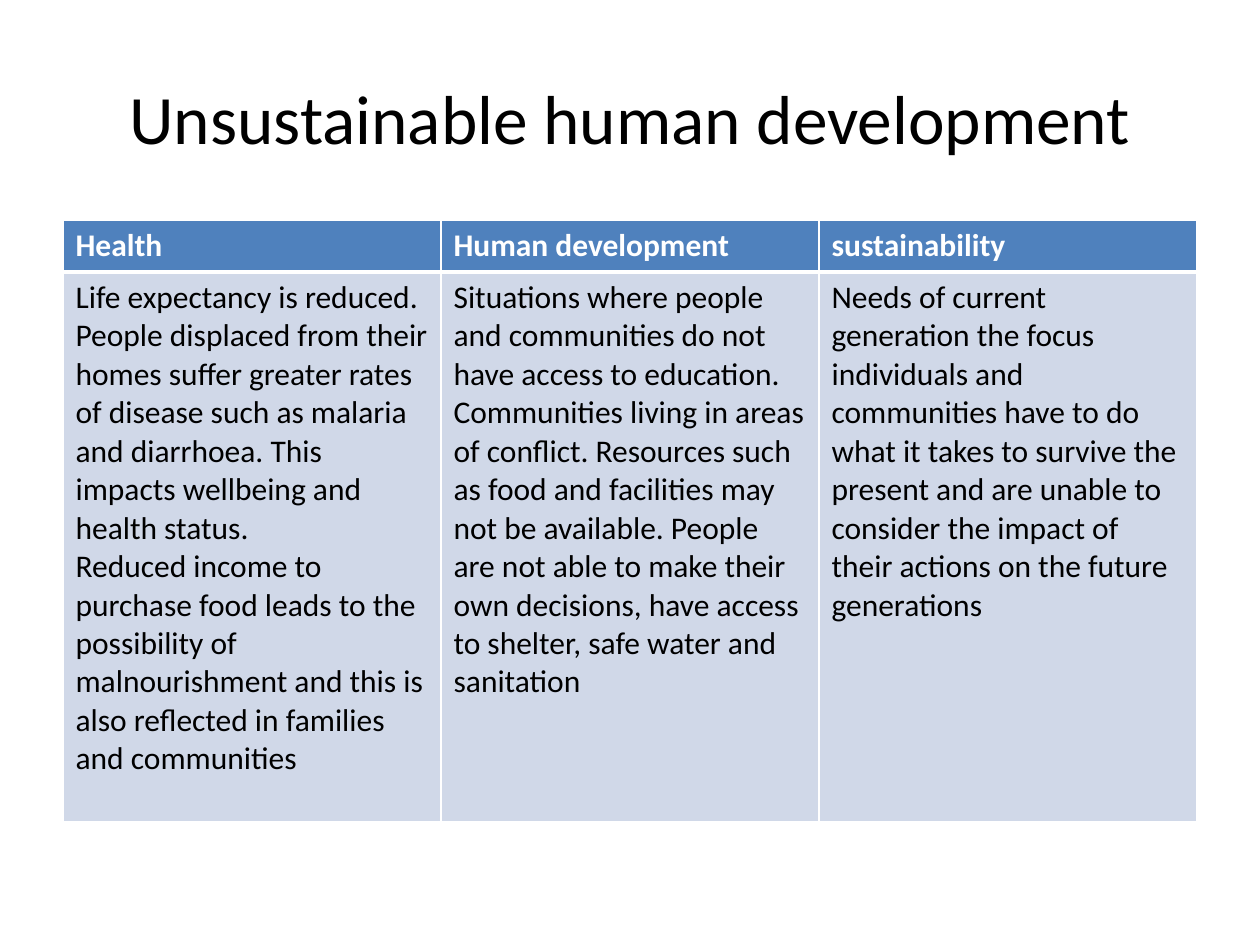
from dataclasses import dataclass

from lxml.etree import SubElement
from pptx import Presentation
from pptx.dml.color import RGBColor as RGB
from pptx.enum.text import MSO_ANCHOR as Anchor, PP_ALIGN as Align
from pptx.oxml.ns import qn
from pptx.util import Inches, Pt


@dataclass(frozen=True)
class Theme:
    font: str = "Calibri"
    title_size: float = 39.6
    cell_size: float = 18
    ink: str = "000000"
    light: str = "FFFFFF"
    header_fill: str = "4F81BD"
    body_fill: str = "D0D8E8"
    thin: float = 1
    thick: float = 3


@dataclass(frozen=True)
class Column:
    heading: str
    body: str


THEME = Theme()
LEFT, WIDTH = Inches(0.5), Inches(9)
HEADER_HEIGHT, BODY_HEIGHT = Inches(0.41), Inches(4.36)

# A vertical tab marks a line break inside a paragraph
COLUMNS = [
    Column("Health",
           "Life expectancy is reduced. People displaced from their homes suffer "
           "greater rates of disease such as malaria and diarrhoea. This impacts "
           "wellbeing and health status. \vReduced income to purchase food leads to "
           "the possibility of malnourishment and this is also reflected in families "
           "and communities"),
    Column("Human development",
           "Situations where people and communities do not have access to education. "
           "Communities living in areas of conflict. Resources such as food and "
           "facilities may not be available. People are not able to make their own "
           "decisions, have access to shelter, safe water and sanitation"),
    Column("sustainability",
           "Needs of current generation the focus individuals and communities have to "
           "do what it takes to survive the present and are unable to consider the "
           "impact of their actions on the future generations"),
]


def write(tf, text: str, *, size: float, color: str, bold: bool = False,
          align=Align.LEFT) -> None:
    p = tf.paragraphs[0]
    p.text = text
    p.alignment = align
    for r in p.runs:
        r.font.name = THEME.font
        r.font.size = Pt(size)
        r.font.bold = bold
        r.font.color.rgb = RGB.from_string(color)


def set_borders(cell, *, top: float, bottom: float) -> None:
    tc_pr = cell._tc.get_or_add_tcPr()
    widths = {"lnL": THEME.thin, "lnR": THEME.thin, "lnT": top, "lnB": bottom}
    for tag, width in widths.items():
        ln = SubElement(tc_pr, qn(f"a:{tag}"), w=str(Pt(width)))
        SubElement(SubElement(ln, qn("a:solidFill")), qn("a:srgbClr"), val=THEME.light)


def fill_cell(cell, text: str, *, header: bool) -> None:
    set_borders(cell, top=THEME.thin if header else THEME.thick,
                bottom=THEME.thick if header else THEME.thin)
    cell.fill.solid()
    cell.fill.fore_color.rgb = RGB.from_string(
        THEME.header_fill if header else THEME.body_fill)
    write(cell.text_frame, text, size=THEME.cell_size, bold=header,
          color=THEME.light if header else THEME.ink)


def add_title(s, text: str) -> None:
    tf = s.shapes.add_textbox(LEFT, Inches(0.3), WIDTH, Inches(1.25)).text_frame
    tf.word_wrap = True
    tf.vertical_anchor = Anchor.MIDDLE
    write(tf, text, size=THEME.title_size, color=THEME.ink, align=Align.CENTER)


def add_comparison(s, columns: list[Column]) -> None:
    table = s.shapes.add_table(2, len(columns), LEFT, Inches(1.75), WIDTH,
                               HEADER_HEIGHT + BODY_HEIGHT).table
    table.rows[0].height = HEADER_HEIGHT
    table.rows[1].height = BODY_HEIGHT
    for i, column in enumerate(columns):
        fill_cell(table.cell(0, i), column.heading, header=True)
        fill_cell(table.cell(1, i), column.body, header=False)


def main() -> None:
    prs = Presentation()
    prs.slide_width, prs.slide_height = Inches(10), Inches(7.5)
    s = prs.slides.add_slide(prs.slide_layouts[6])

    # Title above a three-column table
    add_title(s, "Unsustainable human development")
    add_comparison(s, COLUMNS)

    prs.save("out.pptx")


if __name__ == "__main__":
    main()
